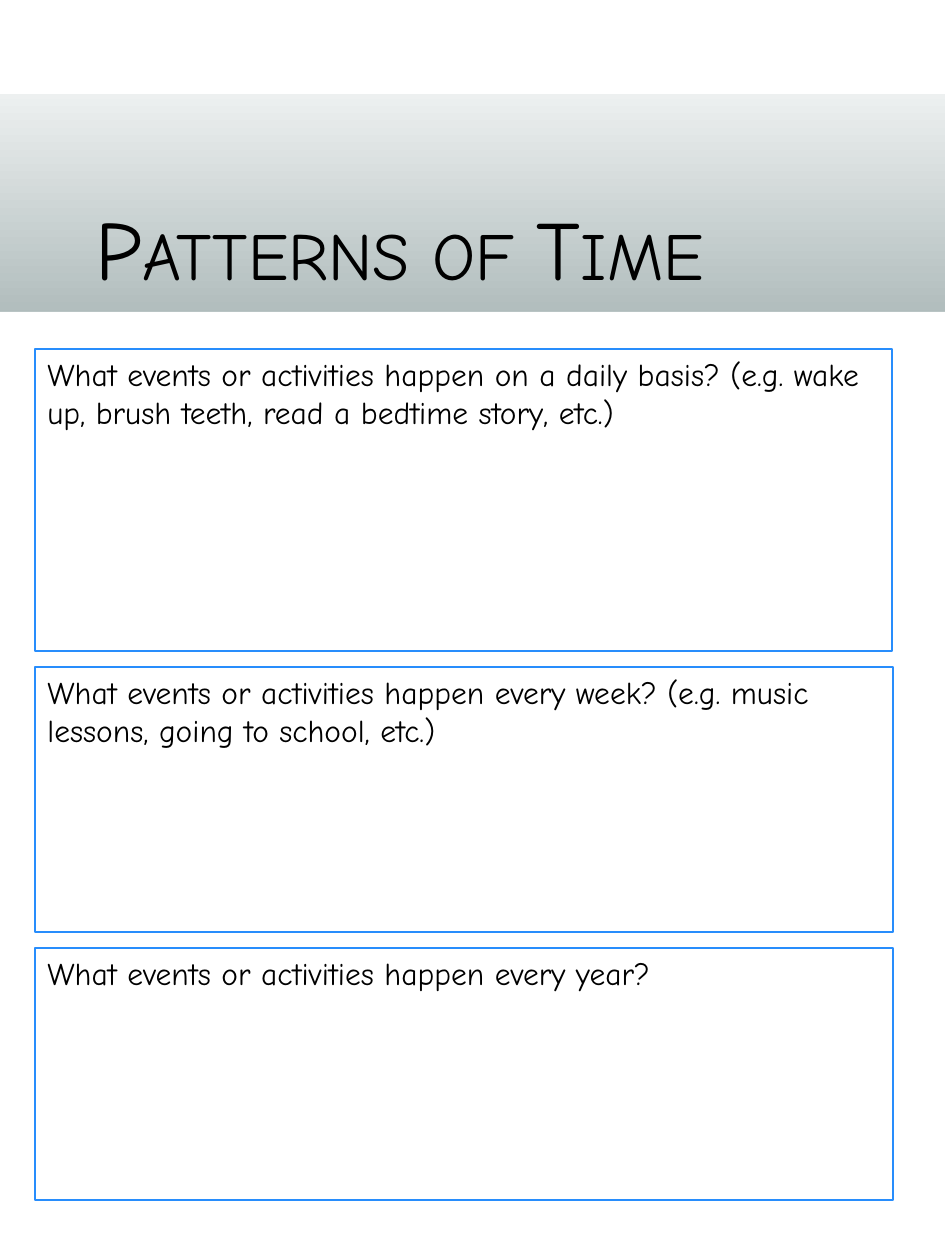
from dataclasses import dataclass

from pptx import Presentation
from pptx.dml.color import RGBColor
from pptx.enum.shapes import MSO_SHAPE
from pptx.enum.text import MSO_ANCHOR, MSO_AUTO_SIZE, PP_ALIGN
from pptx.util import Emu, Pt

PX = 914400 / 126
WIDTH, HEIGHT = 945, 1260


def px(*lengths):
    return [Emu(round(n * PX)) for n in lengths]


@dataclass(frozen=True)
class Theme:
    font: str = "Comic Neue"
    title_size: int = 48
    body_size: int = 18
    text: RGBColor = RGBColor(0, 0, 0)
    paper: RGBColor = RGBColor(255, 255, 255)
    border: RGBColor = RGBColor(0x28, 0x8D, 0xFC)
    band: tuple = (RGBColor(0xEF, 0xF2, 0xF2), RGBColor(0xB0, 0xBC, 0xBC))


class Page:
    """Holds the theme and the slide being filled."""

    def __init__(self, slide, theme):
        self.s, self.theme = slide, theme

    def rect(self, *box):
        sp = self.s.shapes.add_shape(MSO_SHAPE.RECTANGLE, *px(*box))
        sp.shadow.inherit = False
        sp.line.fill.background()
        return sp

    def strip(self, *box):
        fill = self.rect(*box).fill
        fill.solid()
        fill.fore_color.rgb = self.theme.paper

    def band(self, *box):
        fill = self.rect(*box).fill
        fill.gradient()
        fill.gradient_angle = 270
        for i, color in enumerate(self.theme.band):
            stop = fill.gradient_stops[i]
            stop.position, stop.color.rgb = i, color

    def set_text(self, sp, text, size, anchor):
        tf = sp.text_frame
        frame = {"word_wrap": True, "auto_size": MSO_AUTO_SIZE.NONE,
                 "vertical_anchor": anchor}
        for name, value in frame.items():
            setattr(tf, name, value)
        p = tf.paragraphs[0]
        p.alignment = PP_ALIGN.LEFT
        r = p.add_run()
        r.text = text
        for name, value in {"name": self.theme.font, "size": Pt(size)}.items():
            setattr(r.font, name, value)
        r.font.color.rgb = self.theme.text
        return p, r

    def title(self, text, *box):
        sp = self.s.shapes.title
        for name, value in zip(("left", "top", "width", "height"), px(*box)):
            setattr(sp, name, value)
        p, r = self.set_text(sp, text, self.theme.title_size, MSO_ANCHOR.BOTTOM)
        p.line_spacing = 0.9
        r._r.get_or_add_rPr().set("cap", "small")
        # Bring the title in front of the band
        self.s.shapes._spTree.append(sp._element)

    def question(self, text, *box):
        sp = self.rect(*box)
        sp.fill.solid()
        sp.fill.fore_color.rgb = self.theme.paper
        sp.line.color.rgb = self.theme.border
        sp.line.width = Pt(1)
        self.set_text(sp, text, self.theme.body_size, MSO_ANCHOR.TOP)


QUESTIONS = [
    ("What events or activities happen on a daily basis? "
     "(e.g. wake up, brush teeth, read a bedtime story, etc.)", 857, 302),
    ("What events or activities happen every week? "
     "(e.g. music lessons, going to school, etc.)", 858, 265),
    ("What events or activities happen every year?", 858, 252),
]


def main():
    prs = Presentation()
    prs.slide_width, prs.slide_height = px(WIDTH, HEIGHT)
    page = Page(prs.slides.add_slide(prs.slide_layouts[5]), Theme())

    page.band(0, 84, WIDTH, 233)
    for top in (312, 84):
        page.strip(0, top, WIDTH, 10)
    page.title("Patterns of Time", 83, 103, 780, 202)

    top, gap = 349, 16
    for text, width, height in QUESTIONS:
        page.question(text, 35, top, width, height)
        top += height + gap

    prs.save("out.pptx")


if __name__ == "__main__":
    main()
